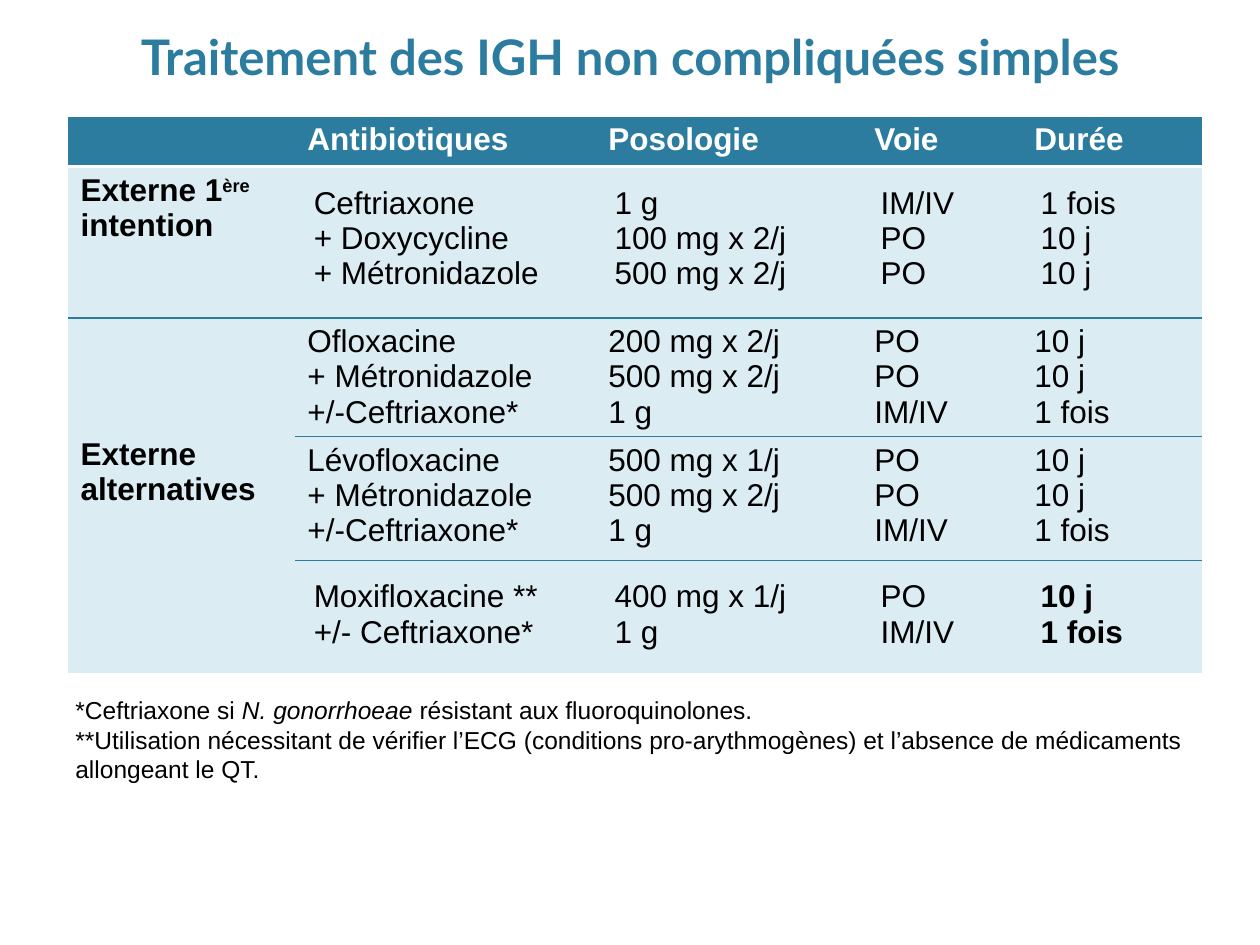
from lxml.etree import SubElement as Sub
from pptx import Presentation
from pptx.dml.color import RGBColor as RGB
from pptx.enum.text import MSO_ANCHOR as Anchor, MSO_AUTO_SIZE as Fit, PP_ALIGN as Align
from pptx.oxml.ns import qn
from pptx.util import Pt

BLUE = RGB(0x2C, 0x7C, 0x9F)
PALE = RGB(0xDB, 0xEC, 0xF3)
WHITE = RGB(0xFF, 0xFF, 0xFF)
BLACK = RGB(0, 0, 0)
NO_STYLE = "{2D5ABB26-0587-4C30-8999-92F81FD0307C}"


class Deck:
    font = "Arial"

    def __init__(self, wide, high):
        self.prs = Presentation()
        self.prs.slide_width, self.prs.slide_height = Pt(wide), Pt(high)
        self.slide = self.prs.slides.add_slide(self.prs.slide_layouts[5])

    def run(self, para, text, size, color=BLACK, bold=False, italic=False, font=None, sup=False):
        run = para.add_run()
        run.text = text
        face = run.font
        face.name, face.size = font or self.font, Pt(size)
        face.bold, face.italic = bold, italic
        face.color.rgb = color
        if sup:
            run._r.get_or_add_rPr().set("baseline", "30000")

    def lines(self, frame, paras, size, **style):
        """Each paragraph is a list of (text, extra style) runs."""
        for i, runs in enumerate(paras):
            para = frame.add_paragraph() if i else frame.paragraphs[0]
            for text, extra in runs:
                self.run(para, text, size, **{**style, **extra})

    def title(self, text, left, top, wide, high):
        box = self.slide.shapes.title
        box.left, box.top, box.width, box.height = Pt(left), Pt(top), Pt(wide), Pt(high)
        frame = box.text_frame
        frame.auto_size, frame.vertical_anchor = Fit.NONE, Anchor.BOTTOM
        frame.paragraphs[0].alignment = Align.CENTER
        self.run(frame.paragraphs[0], text, 28, BLUE, True, font="Lato")

    def note(self, paras, left, top, wide, high):
        box = self.slide.shapes.add_textbox(Pt(left), Pt(top), Pt(wide), Pt(high))
        box.text_frame.word_wrap = False
        self.lines(box.text_frame, paras, 14)

    def table(self, left, top, cols, rows):
        shape = self.slide.shapes.add_table(
            len(rows), len(cols), Pt(left), Pt(top), Pt(sum(cols)), Pt(sum(rows)))
        grid = shape.table
        grid._tbl.tblPr.find(qn("a:tableStyleId")).text = NO_STYLE
        for col, wide in zip(grid.columns, cols):
            col.width = Pt(wide)
        for row, high in zip(grid.rows, rows):
            row.height = Pt(high)
        return grid

    def cell(self, cell, paras, fill, above, below, pad=None, **style):
        props = cell._tc.get_or_add_tcPr()
        for tag, (color, width) in (("a:lnT", above), ("a:lnB", below)):
            line = Sub(props, qn(tag), w=str(Pt(width)))
            Sub(Sub(line, qn("a:solidFill")), qn("a:srgbClr"), val=str(color))
        cell.fill.solid()
        cell.fill.fore_color.rgb = fill
        if pad:
            cell.margin_left = cell.margin_right = Pt(pad)
            cell.margin_top = cell.margin_bottom = Pt(pad)
        self.lines(cell.text_frame, paras, 18, **style)


def plain(text):
    return [[(line, {})] for line in text.split("\n")]


HEADS = ["", "Antibiotiques", "Posologie", "Voie", "Durée"]
# Regimens: padding, then the text of each column
REGIMENS = [
    (10.8, "Ceftriaxone\n+ Doxycycline\n+ Métronidazole",
     "1 g\n100 mg x 2/j\n500 mg x 2/j", "IM/IV\nPO\nPO", "1 fois\n10 j\n10 j"),
    (None, "Ofloxacine\n+ Métronidazole\n+/-Ceftriaxone*",
     "200 mg x 2/j\n500 mg x 2/j\n1 g", "PO\nPO\nIM/IV", "10 j\n10 j\n1 fois"),
    (None, "Lévofloxacine\n+ Métronidazole\n+/-Ceftriaxone*",
     "500 mg x 1/j\n500 mg x 2/j\n1 g", "PO\nPO\nIM/IV", "10 j\n10 j\n1 fois"),
    (10.8, "Moxifloxacine **\n+/- Ceftriaxone*",
     "400 mg x 1/j\n1 g", "PO\nIM/IV", "10 j\n1 fois"),
]
# Horizontal rules from the top of the table to its foot
RULES = [(WHITE, 1.5), (WHITE, 2.25), (BLUE, 1.5), (BLUE, 0.75), (BLUE, 0.75), (WHITE, 1)]


def main():
    deck = Deck(720, 540)
    deck.title("Traitement des IGH non compliquées simples", 0, 8.6, 720, 44)

    # Table header
    grid = deck.table(38.9, 66.2, [129.6, 172, 152, 91.4, 103], [29, 86.4, 67.5, 71, 64.6])
    for c, head in enumerate(HEADS):
        deck.cell(grid.cell(0, c), plain(head), BLUE, *RULES[:2], color=WHITE, bold=True)

    # Regimens, the last duration in bold
    for r, (pad, *texts) in enumerate(REGIMENS, 1):
        for c, text in enumerate(texts, 1):
            deck.cell(grid.cell(r, c), plain(text), PALE, RULES[r], RULES[r + 1], pad,
                      bold=(r, c) == (4, 4))

    # Row labels
    first = [[("Externe 1", {}), ("ère", {"sup": True}), (" intention", {})]]
    deck.cell(grid.cell(1, 0), first, PALE, RULES[1], RULES[2], bold=True)
    other = grid.cell(2, 0)
    other.merge(grid.cell(4, 0))
    deck.cell(other, plain("Externe alternatives"), PALE, RULES[2], RULES[5], bold=True)
    other.vertical_anchor = Anchor.MIDDLE
    other.margin_bottom = Pt(30.6)

    # Footnotes
    deck.note([
        [("*Ceftriaxone si ", {}), ("N. gonorrhoeae ", {"italic": True}),
         ("résistant aux fluoroquinolones.", {})],
        [("**Utilisation nécessitant de vérifier l’ECG (conditions pro-arythmogènes) "
          "et l’absence de médicaments", {})],
        [("allongeant le QT.", {})],
    ], 36, 393.8, 676.8, 58.3)

    deck.prs.save("out.pptx")


if __name__ == "__main__":
    main()
